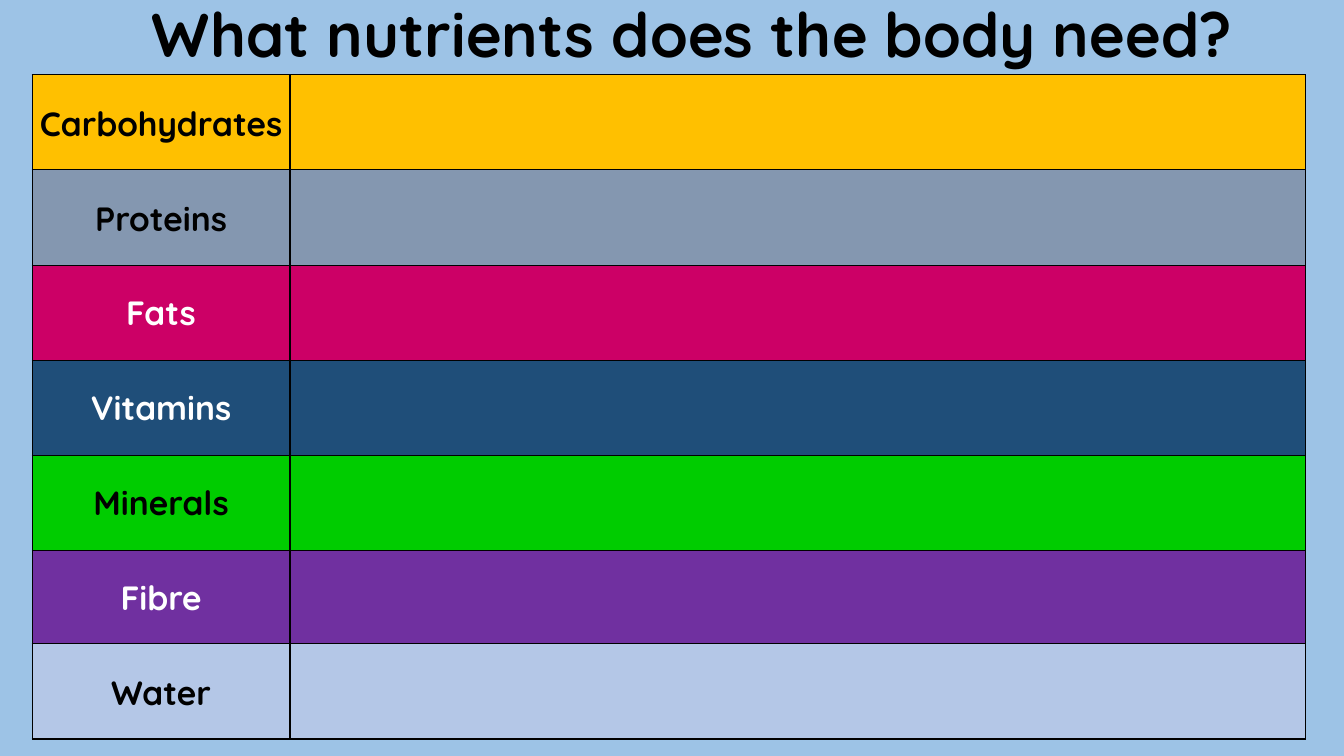
from lxml import etree
from pptx import Presentation
from pptx.dml.color import RGBColor
from pptx.enum.text import MSO_AUTO_SIZE, PP_ALIGN
from pptx.oxml.ns import qn
from pptx.util import Cm, Pt

CENTER, LEFT = PP_ALIGN.CENTER, PP_ALIGN.LEFT
FIT_SHAPE = MSO_AUTO_SIZE.SHAPE_TO_FIT_TEXT
FONT = "Quicksand"

SKY = RGBColor(0x9D, 0xC3, 0xE6)
BLACK = RGBColor(0x00, 0x00, 0x00)
WHITE = RGBColor(0xFF, 0xFF, 0xFF)
AMBER = RGBColor(0xFF, 0xC0, 0x00)
SLATE = RGBColor(0x84, 0x97, 0xB0)
MAGENTA = RGBColor(0xCC, 0x00, 0x66)
NAVY = RGBColor(0x1F, 0x4E, 0x79)
GREEN = RGBColor(0x00, 0xCC, 0x00)
PURPLE = RGBColor(0x70, 0x30, 0xA0)
PALE_BLUE = RGBColor(0xB4, 0xC7, 0xE7)

# name, fill, text colour, row height, label width
NUTRIENTS = [
    ("Carbohydrates", AMBER, BLACK, 2.4, 7.11),
    ("Proteins", SLATE, BLACK, 2.4, 4.14),
    ("Fats", MAGENTA, WHITE, 2.4, 2.74),
    ("Vitamins", NAVY, WHITE, 2.4, 4.57),
    ("Minerals", GREEN, BLACK, 2.4, 4.17),
    ("Fibre", PURPLE, WHITE, 2.34, 2.67),
    ("Water", PALE_BLUE, BLACK, 2.4, 3.78),
]
COLUMN_WIDTHS = (6.5, 25.58)


def add_text(page, box, text, size, color, align, wrap):
    """Add one bold line of text in the box (left, top, width, height)."""
    frame = page.shapes.add_textbox(*map(Cm, box)).text_frame
    frame.word_wrap = wrap
    frame.auto_size = FIT_SHAPE
    para = frame.paragraphs[0]
    para.text = text
    para.alignment = align
    para.font.name = FONT
    para.font.size = Pt(size)
    para.font.bold = True
    para.font.color.rgb = color


def style_cell(cell, color):
    """Fill a cell and give it thin black borders."""
    properties = cell._tc.get_or_add_tcPr()
    for side in ("lnL", "lnR", "lnT", "lnB"):
        line = etree.SubElement(properties, qn(f"a:{side}"), w=str(Pt(1)))
        fill = etree.SubElement(line, qn("a:solidFill"))
        etree.SubElement(fill, qn("a:srgbClr"), val=str(BLACK))
    cell.fill.solid()
    cell.fill.fore_color.rgb = color


def add_nutrient_table(page, box):
    """Add the coloured grid, one row per nutrient, in the box."""
    table = page.shapes.add_table(len(NUTRIENTS), len(COLUMN_WIDTHS), *map(Cm, box)).table
    table.first_row = table.horz_banding = False
    for column, width in zip(table.columns, COLUMN_WIDTHS):
        column.width = Cm(width)
    for row, (_, color, _, height, _) in zip(table.rows, NUTRIENTS):
        row.height = Cm(height)
        for cell in row.cells:
            style_cell(cell, color)


def add_nutrient_labels(page, box):
    """Stack the nutrient names at equal steps, centred in the box."""
    left, top, width, height = box
    step = height / len(NUTRIENTS)
    for index, (name, _, color, _, label_width) in enumerate(NUTRIENTS):
        label_left = left + (width - label_width) / 2
        label_box = (label_left, top + index * step, label_width, 1.27)
        add_text(page, label_box, name, 24, color, CENTER, True)


def main():
    """Build the nutrients slide and save it."""
    deck = Presentation()
    deck.slide_width, deck.slide_height = Cm(33.87), Cm(19.05)
    page = deck.slides.add_slide(deck.slide_layouts[6])
    page.background.fill.solid()
    page.background.fill.fore_color.rgb = SKY
    add_nutrient_table(page, (0.81, 1.88, sum(COLUMN_WIDTHS), 16.74))
    title_box = (3.58, -0.23, 27.86, 2.13)
    add_text(page, title_box, "What nutrients does the body need?", 44, BLACK, LEFT, False)
    add_nutrient_labels(page, (0.81, 2.46, COLUMN_WIDTHS[0], 16.73))
    deck.save("out.pptx")


if __name__ == "__main__":
    main()
